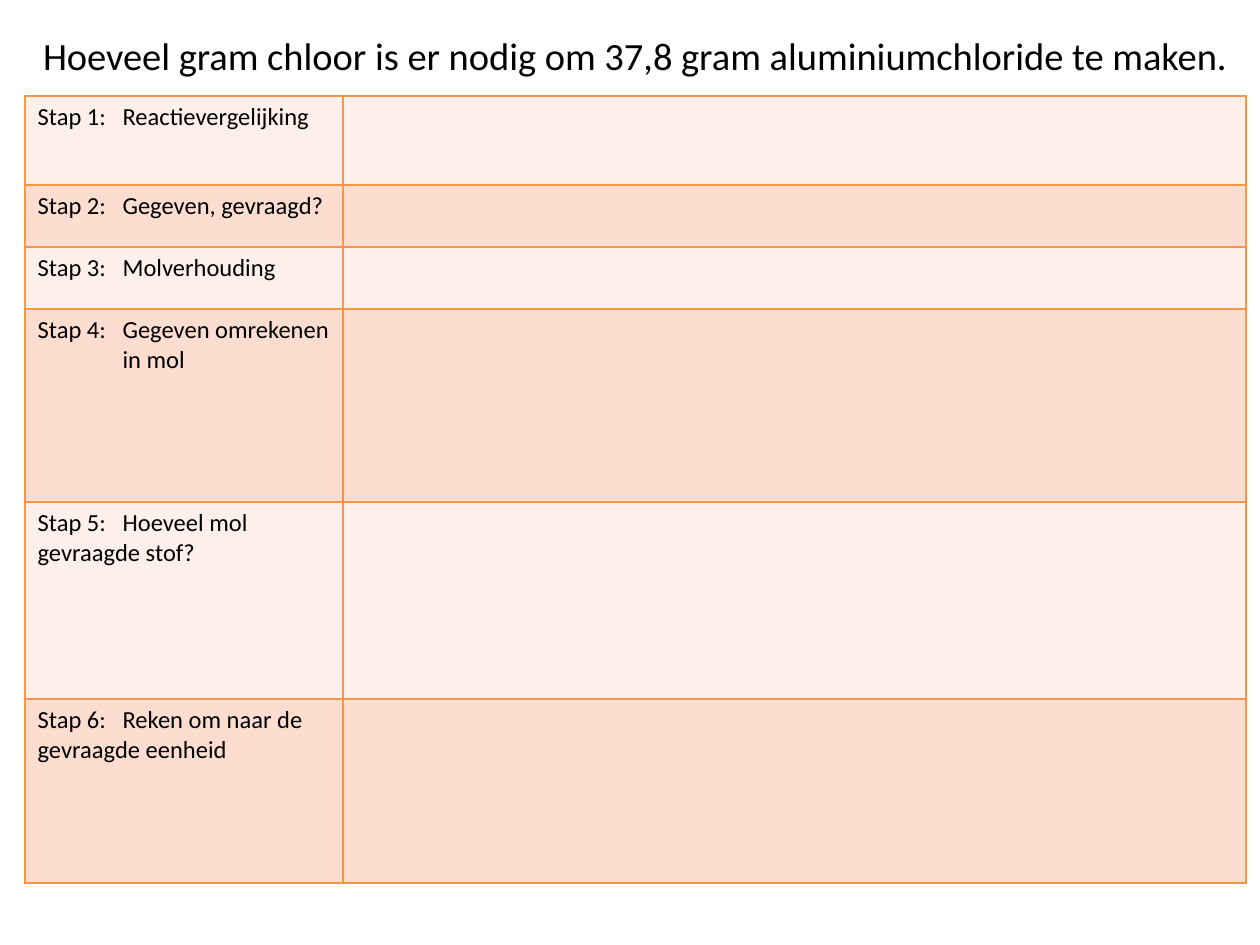
from lxml import etree
from pptx import Presentation
from pptx.dml.color import RGBColor
from pptx.enum.text import MSO_ANCHOR
from pptx.oxml.ns import qn
from pptx.util import Emu, Pt

EMU_PER_INCH = 914400
PX_PER_INCH = 126
TOP = MSO_ANCHOR.TOP

BLACK = RGBColor(0x00, 0x00, 0x00)
ORANGE = RGBColor(0xF7, 0x96, 0x46)
LIGHT = RGBColor(0xFD, 0xEF, 0xE9)
DARK = RGBColor(0xFC, 0xDD, 0xCF)

FONT = "Calibri"
TAB = 85
COLUMN_WIDTHS = [318, 903]
# step text, row height, whether wrapped lines align with the tab
STEPS = [
    ("Reactievergelijking", 89, False),
    ("Gegeven, gevraagd?", 62, False),
    ("Molverhouding", 62, False),
    ("Gegeven omrekenen in mol", 193, True),
    ("Hoeveel mol gevraagde stof?", 197, False),
    ("Reken om naar de gevraagde eenheid", 184, False),
]


def px(length):
    return Emu(round(length * EMU_PER_INCH / PX_PER_INCH))


def add_run(para, text, size):
    span = para.add_run()
    span.text = text
    span.font.name = FONT
    span.font.size = Pt(size)
    span.font.bold = False
    span.font.color.rgb = BLACK


def set_tab(para, position, hanging):
    properties = para._p.get_or_add_pPr()
    if hanging:
        properties.set("marL", str(px(position)))
        properties.set("indent", str(-px(position)))
    tabs = etree.SubElement(properties, qn("a:tabLst"))
    etree.SubElement(tabs, qn("a:tab"), pos=str(px(position)), algn="l")


def style_cell(cell, colour):
    """Set the cell's borders and fill."""
    properties = cell._tc.get_or_add_tcPr()
    for side in ("a:lnL", "a:lnR", "a:lnT", "a:lnB"):
        line = etree.SubElement(properties, qn(side), w=str(Pt(1)))
        fill = etree.SubElement(line, qn("a:solidFill"))
        etree.SubElement(fill, qn("a:srgbClr"), val=str(ORANGE))
    cell.fill.solid()
    cell.fill.fore_color.rgb = colour
    cell.vertical_anchor = TOP


def add_title(page, text):
    box = page.shapes.add_textbox(px(5), px(26), px(1255), px(59))
    frame = box.text_frame
    frame.word_wrap = True
    frame.margin_left = px(38)
    add_run(frame.paragraphs[0], text, 22)


def add_step_table(page):
    heights = [height for _, height, _ in STEPS]
    table = page.shapes.add_table(
        len(STEPS), len(COLUMN_WIDTHS), px(25), px(96),
        px(sum(COLUMN_WIDTHS)), px(sum(heights))).table
    table.first_row = False
    table.horz_banding = False
    for column, width in zip(table.columns, COLUMN_WIDTHS):
        column.width = px(width)
    for index, (text, height, hanging) in enumerate(STEPS):
        row = table.rows[index]
        row.height = px(height)
        for cell in row.cells:
            style_cell(cell, DARK if index % 2 else LIGHT)
        para = row.cells[0].text_frame.paragraphs[0]
        set_tab(para, TAB, hanging)
        add_run(para, f"Stap {index + 1}:\t{text}", 14)


def main():
    deck = Presentation()
    deck.slide_width = px(1260)
    deck.slide_height = px(945)
    page = deck.slides.add_slide(deck.slide_layouts[6])
    add_step_table(page)
    add_title(page, "Hoeveel gram chloor is er nodig om 37,8 gram "
                    "aluminiumchloride te maken.")
    deck.save("out.pptx")


if __name__ == "__main__":
    main()
